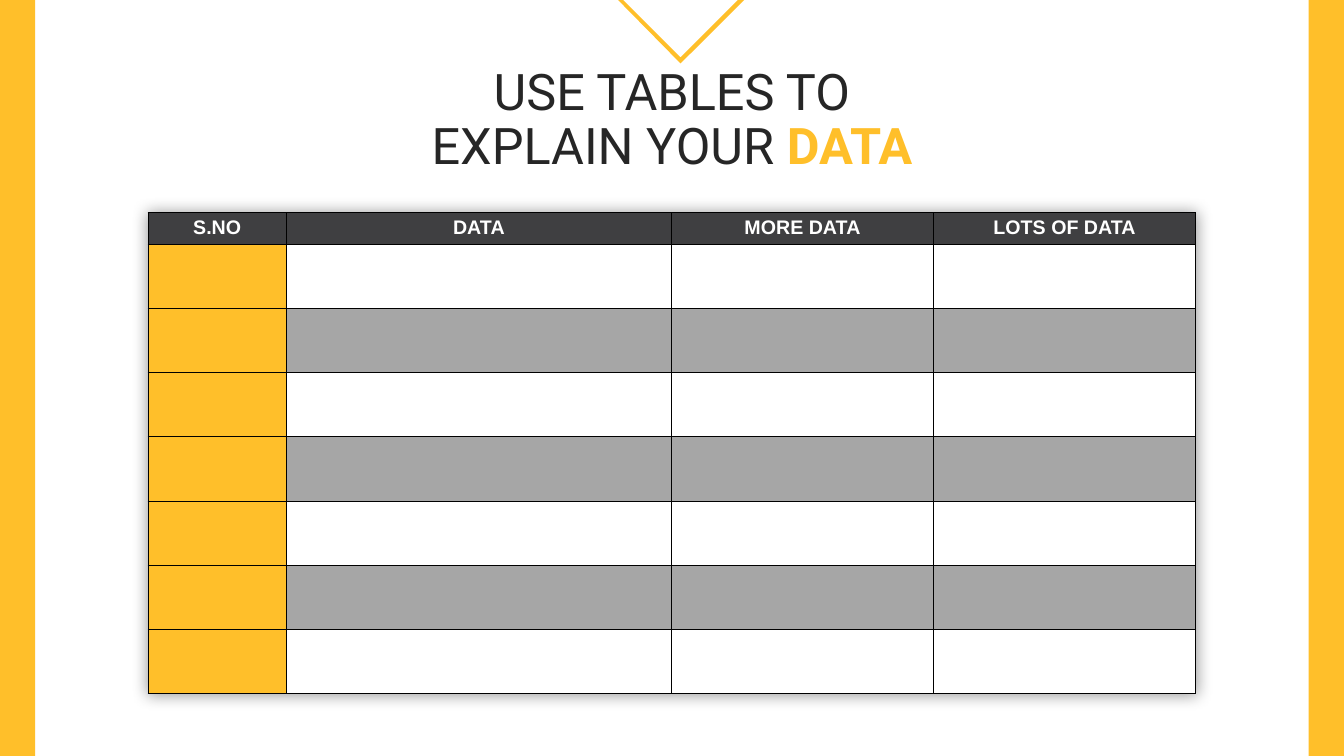
from dataclasses import dataclass

from lxml import etree
from pptx import Presentation
from pptx.dml.color import RGBColor
from pptx.enum.shapes import MSO_SHAPE
from pptx.enum.text import MSO_ANCHOR, PP_ALIGN
from pptx.oxml.ns import qn
from pptx.shapes.autoshape import Shape
from pptx.slide import Slide
from pptx.table import _Cell as Cell
from pptx.text.text import _Paragraph as Para
from pptx.util import Inches, Pt

RECT = MSO_SHAPE.RECTANGLE
BOTTOM = MSO_ANCHOR.BOTTOM
CENTER = PP_ALIGN.CENTER


@dataclass(frozen=True)
class Theme:
    """Hold the colours, fonts and type sizes."""
    gold: str = "FFBF2A"
    ink: str = "262626"
    dark: str = "3F3F41"
    gray: str = "A6A6A6"
    white: str = "FFFFFF"
    black: str = "000000"
    title_font: str = "Roboto"
    table_font: str = "Arial"
    title_size: int = 36
    head_size: int = 14


@dataclass(frozen=True)
class Column:
    """Describe a table column."""
    head: str
    width: float
    fills: tuple[str, str]


THEME = Theme()
WIDTH, HEIGHT = 13.33, 7.5
BAR = 0.35
BANDS = (THEME.white, THEME.gray)
COLUMNS = (
    Column("S.NO", 1.37, (THEME.gold, THEME.gold)),
    Column("DATA", 3.82, BANDS),
    Column("MORE DATA", 2.6, BANDS),
    Column("LOTS OF DATA", 2.6, BANDS),
)
CHEVRON = ((6.13, 0), (6.18, 0), (6.75, 0.57), (7.32, 0), (7.38, 0), (6.75, 0.63))
BODY_ROWS = 7
HEAD_HEIGHT = 0.3
TABLE_TOP, TABLE_LEFT, TABLE_HEIGHT = 2.11, 1.47, 4.76


def paint(shape: Shape, color: str) -> None:
    """Give a shape a flat fill with no line or shadow."""
    shape.shadow.inherit = False
    shape.fill.solid()
    shape.fill.fore_color.rgb = RGBColor.from_string(color)
    shape.line.fill.background()


def add_run(para: Para, text: str, font: str, size: int, color: str, bold: bool) -> None:
    """Add one styled run to a paragraph."""
    run = para.add_run()
    run.text = text
    run.font.name = font
    run.font.size = Pt(size)
    run.font.bold = bold
    run.font.color.rgb = RGBColor.from_string(color)


def add_frame(slide: Slide) -> None:
    """Draw the chevron and the two side bars."""
    points = [(Inches(x), Inches(y)) for x, y in CHEVRON]
    outline = slide.shapes.build_freeform(*points[0])
    outline.add_line_segments(points[1:], close=True)
    paint(outline.convert_to_shape(), THEME.gold)
    for left in (0, WIDTH - BAR):
        bar = slide.shapes.add_shape(RECT, Inches(left), 0, Inches(BAR), Inches(HEIGHT))
        paint(bar, THEME.gold)


def add_title(slide: Slide) -> None:
    """Write the title with its last word in gold."""
    box = slide.shapes.add_textbox(Inches(3.83), Inches(0.52), Inches(5.67), Inches(1.32))
    frame = box.text_frame
    frame.word_wrap = True
    frame.vertical_anchor = BOTTOM
    frame.margin_left = frame.margin_right = Inches(0.1)
    frame.margin_top = frame.margin_bottom = Inches(0.1)
    para = frame.paragraphs[0]
    para.alignment = CENTER
    para.line_spacing = 0.9
    font, size = THEME.title_font, THEME.title_size
    add_run(para, "USE TABLES TO EXPLAIN YOUR ", font, size, THEME.ink, False)
    add_run(para, "DATA", font, size, THEME.gold, True)


def style_cell(cell: Cell, color: str) -> None:
    """Fill a cell and rule its four sides."""
    cell.margin_left = cell.margin_right = Inches(0.08)
    cell.margin_top = cell.margin_bottom = Inches(0.04)
    cell.fill.solid()
    cell.fill.fore_color.rgb = RGBColor.from_string(color)
    props = cell._tc.get_or_add_tcPr()
    for place, side in enumerate(("lnL", "lnR", "lnT", "lnB")):
        line = etree.Element(qn(f"a:{side}"), w=str(Pt(1)))
        fill = etree.SubElement(line, qn("a:solidFill"))
        etree.SubElement(fill, qn("a:srgbClr"), val=THEME.black)
        props.insert(place, line)


def add_grid(slide: Slide) -> None:
    """Draw the banded table with its soft shadow."""
    width = sum(column.width for column in COLUMNS)
    table = slide.shapes.add_table(
        BODY_ROWS + 1, len(COLUMNS), Inches(TABLE_LEFT), Inches(TABLE_TOP),
        Inches(width), Inches(TABLE_HEIGHT)).table
    for index, row in enumerate(table.rows):
        body = (TABLE_HEIGHT - HEAD_HEIGHT) / BODY_ROWS
        row.height = Inches(body if index else HEAD_HEIGHT)
    for place, column in enumerate(COLUMNS):
        table.columns[place].width = Inches(column.width)
        head = table.cell(0, place)
        style_cell(head, THEME.dark)
        para = head.text_frame.paragraphs[0]
        para.alignment = CENTER
        add_run(para, column.head, THEME.table_font, THEME.head_size, THEME.white, True)
        for index in range(BODY_ROWS):
            style_cell(table.cell(index + 1, place), column.fills[index % 2])
    effects = etree.Element(qn("a:effectLst"))
    shadow = etree.SubElement(effects, qn("a:outerShdw"), blurRad=str(Inches(0.15)),
                              dist="0", dir="0", algn="ctr", rotWithShape="0")
    tint = etree.SubElement(shadow, qn("a:srgbClr"), val=THEME.black)
    etree.SubElement(tint, qn("a:alpha"), val="40000")
    table._tbl.tblPr.insert(0, effects)


def main() -> None:
    """Build and save the slide."""
    deck = Presentation()
    deck.slide_width, deck.slide_height = Inches(WIDTH), Inches(HEIGHT)
    slide = deck.slides.add_slide(deck.slide_layouts[6])
    add_frame(slide)
    add_title(slide)
    add_grid(slide)
    deck.save("out.pptx")


if __name__ == "__main__":
    main()
